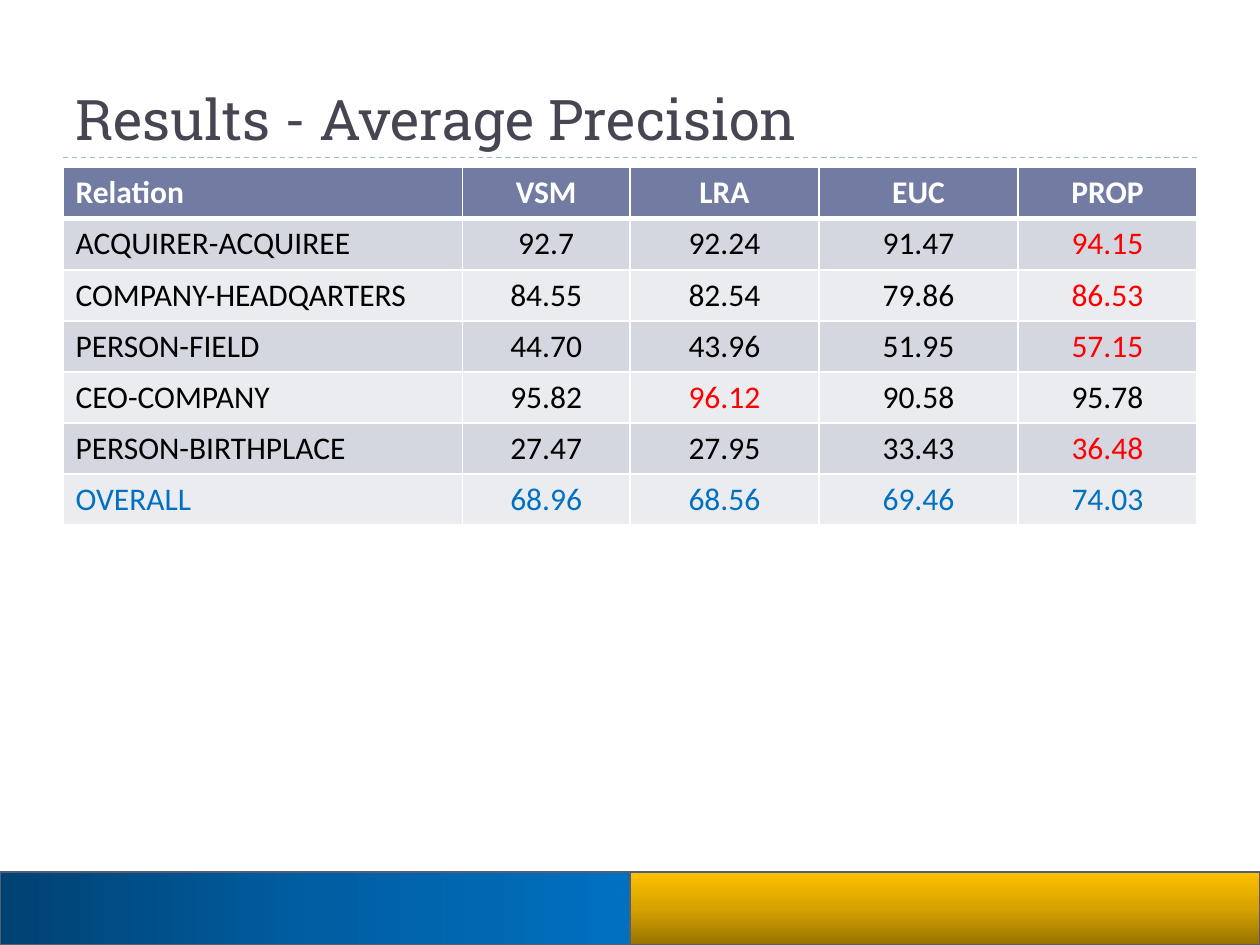
from copy import deepcopy

from lxml.etree import SubElement
from pptx import Presentation
from pptx.dml.color import RGBColor
from pptx.enum.dml import MSO_LINE_DASH_STYLE as Dash
from pptx.enum.shapes import MSO_CONNECTOR as Connector, MSO_SHAPE as Shape
from pptx.enum.text import MSO_ANCHOR as Anchor, PP_ALIGN as Align
from pptx.oxml.ns import qn
from pptx.util import Inches, Pt

WHITE = RGBColor(0xFF, 0xFF, 0xFF)
BLACK = RGBColor(0x00, 0x00, 0x00)
RED = RGBColor(0xFF, 0x00, 0x00)
BLUE = RGBColor(0x00, 0x70, 0xC0)
TITLE_GRAY = RGBColor(0x46, 0x46, 0x53)
RULE_BLUE = RGBColor(0x9F, 0xB8, 0xCD)
BAND_LINE = RGBColor(0x54, 0x5C, 0x79)
HEADER_FILL = RGBColor(0x72, 0x7C, 0xA3)
ROW_FILLS = [RGBColor(0xEB, 0xEC, 0xF0), RGBColor(0xD5, 0xD7, 0xE0)]
BLUE_STOPS = [RGBColor(0x00, 0x42, 0x72), RGBColor(0x00, 0x5E, 0xA2), BLUE]
GOLD_STOPS = [RGBColor(0x97, 0x72, 0x00), RGBColor(0xD7, 0xA2, 0x00),
              RGBColor(0xFF, 0xC0, 0x00)]

COLUMN_WIDTHS = [3.17, 1.33, 1.5, 1.58, 1.42]
ROWS = [
    ["Relation", "VSM", "LRA", "EUC", "PROP"],
    ["ACQUIRER-ACQUIREE", "92.7", "92.24", "91.47", "94.15"],
    ["COMPANY-HEADQARTERS", "84.55", "82.54", "79.86", "86.53"],
    ["PERSON-FIELD", "44.70", "43.96", "51.95", "57.15"],
    ["CEO-COMPANY", "95.82", "96.12", "90.58", "95.78"],
    ["PERSON-BIRTHPLACE", "27.47", "27.95", "33.43", "36.48"],
    ["OVERALL", "68.96", "68.56", "69.46", "74.03"],
]
OVERALL_ROW = len(ROWS) - 1


def add_run(paragraph, text, font_name, size, color, bold=False):
    run = paragraph.add_run()
    run.text = text
    run.font.name = font_name
    run.font.size = Pt(size)
    run.font.color.rgb = color
    run.font.bold = bold


def add_border(cell, side, width):
    """Draw a white border on one side: L, R, T or B, called in that order."""
    line = SubElement(cell._tc.get_or_add_tcPr(), qn(f"a:ln{side}"), w=str(Pt(width)))
    fill = SubElement(line, qn("a:solidFill"))
    SubElement(fill, qn("a:srgbClr"), val=str(WHITE))


presentation = Presentation()
presentation.slide_width = Inches(10)
presentation.slide_height = Inches(7.5)
slide = presentation.slides.add_slide(presentation.slide_layouts[6])

# Dashed rule under the title
rule = slide.shapes.add_connector(
    Connector.STRAIGHT, Inches(0.5), Inches(1.25), Inches(9.5), Inches(1.25))
rule.line.color.rgb = RULE_BLUE
rule.line.width = Pt(0.75)
rule.line.dash_style = Dash.DASH
SubElement(rule._element.spPr, qn("a:effectLst"))

# Two-colour footer band
for left, colors, angle in [(0, BLUE_STOPS, 0), (5, GOLD_STOPS, 90)]:
    band = slide.shapes.add_shape(
        Shape.RECTANGLE, Inches(left), Inches(6.92), Inches(5), Inches(0.58))
    band.shadow.inherit = False
    band.line.color.rgb = BAND_LINE
    band.line.width = Pt(1.5)
    band.fill.gradient()
    band.fill.gradient_angle = angle
    stop_list = band._element.spPr.find(".//" + qn("a:gsLst"))
    stop_list.insert(1, deepcopy(stop_list[0]))
    for stop, color, position in zip(band.fill.gradient_stops, colors, [0, 0.5, 1]):
        stop.color.rgb = color
        stop.position = position

# Title
title = slide.shapes.add_textbox(Inches(0.5), Inches(0.17), Inches(9), Inches(1.08))
title.text_frame.word_wrap = True
title.text_frame.vertical_anchor = Anchor.BOTTOM
add_run(title.text_frame.paragraphs[0], "Results - Average Precision",
        "Roboto Slab", 32, TITLE_GRAY)

# Results table
table = slide.shapes.add_table(
    len(ROWS), len(COLUMN_WIDTHS),
    Inches(0.5), Inches(1.33), Inches(9), Inches(2.84)).table
table.horz_banding = False
for column, width in zip(table.columns, COLUMN_WIDTHS):
    column.width = Inches(width)

for row_index, values in enumerate(ROWS):
    is_header = row_index == 0
    best = max(values[1:])
    for column_index, value in enumerate(values):
        cell = table.cell(row_index, column_index)
        add_border(cell, "L", 1)
        add_border(cell, "R", 1)
        add_border(cell, "T", 3 if row_index == 1 else 1)
        add_border(cell, "B", 3 if is_header else 1)
        cell.fill.solid()
        cell.fill.fore_color.rgb = HEADER_FILL if is_header else ROW_FILLS[row_index % 2]

        if is_header:
            color = WHITE
        elif row_index == OVERALL_ROW:
            color = BLUE
        else:
            color = RED if value == best else BLACK
        paragraph = cell.text_frame.paragraphs[0]
        paragraph.alignment = Align.CENTER if column_index else Align.LEFT
        add_run(paragraph, value, "Calibri", 18, color, bold=is_header)

presentation.save("out.pptx")
